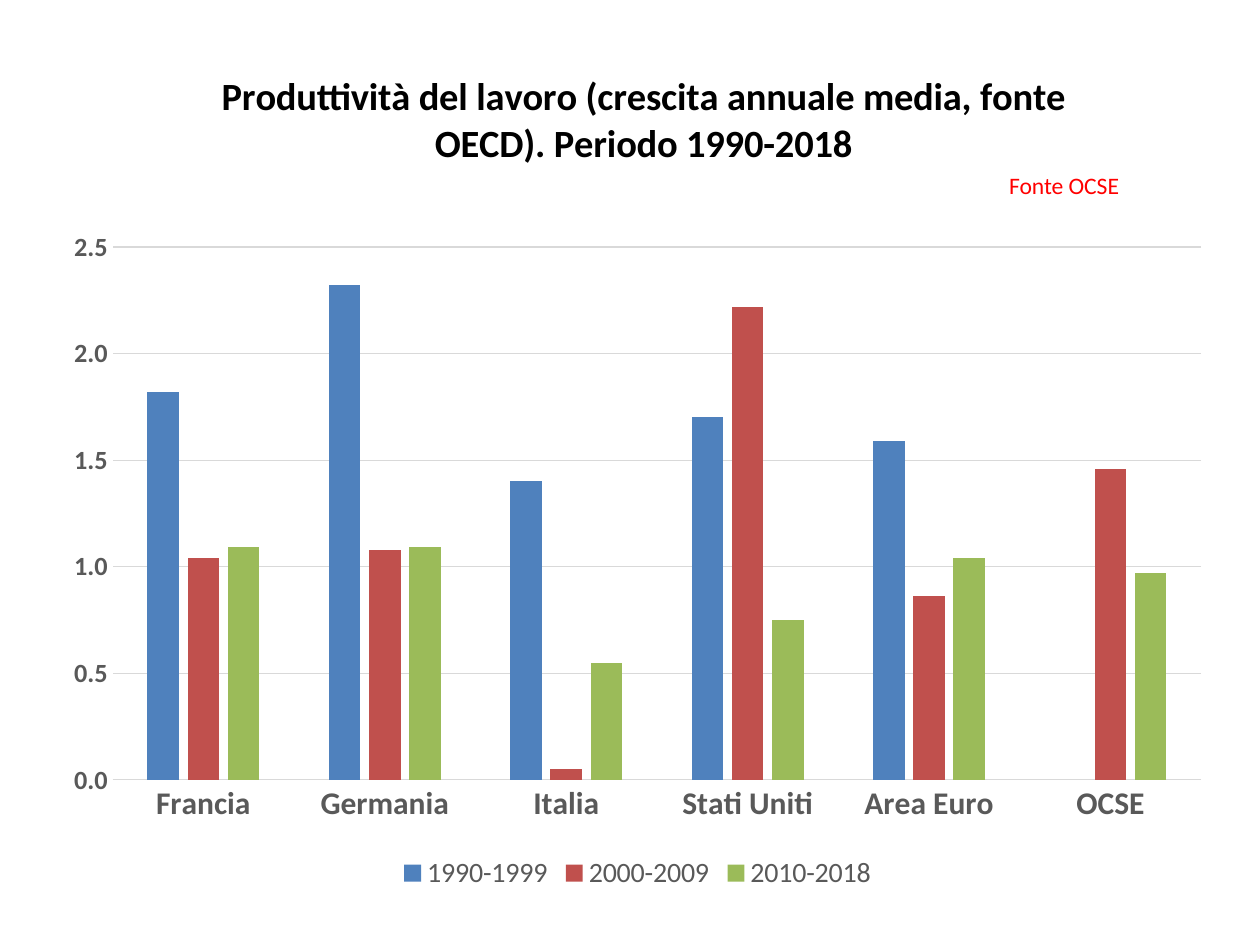
"""Build a slide with a clustered column chart of labour productivity growth."""
from lxml.etree import SubElement
from pptx import Presentation
from pptx.chart.data import CategoryChartData
from pptx.dml.color import RGBColor
from pptx.enum.chart import XL_CHART_TYPE as ChartType
from pptx.enum.chart import XL_LEGEND_POSITION as LegendPosition
from pptx.enum.chart import XL_TICK_MARK as TickMark
from pptx.oxml.ns import qn
from pptx.util import Inches, Pt

TITLE = "Produttività del lavoro (crescita annuale media, fonte OECD). Periodo 1990-2018"
SOURCE = "Fonte OCSE"
COUNTRIES = ["Francia", "Germania", "Italia", "Stati Uniti", "Area Euro", "OCSE"]
PERIODS = [
    ("1990-1999", [1.82, 2.32, 1.4, 1.7, 1.59, None], "blue"),
    ("2000-2009", [1.04, 1.08, 0.05, 2.22, 0.86, 1.46], "red"),
    ("2010-2018", [1.09, 1.09, 0.55, 0.75, 1.04, 0.97], "green"),
]
COLORS = {
    "blue": "4F81BD", "red": "C0504D", "green": "9BBB59", "black": "000000",
    "label": "595959", "grid": "D9D9D9", "source": "FF0000",
}
FONT = "Calibri"
TITLE_LAYOUT = {"xMode": "edge", "yMode": "edge", "x": 0.14, "y": 0.03}
PLOT_LAYOUT = {
    "layoutTarget": "inner", "xMode": "edge", "yMode": "edge",
    "x": 0.053, "y": 0.245, "w": 0.927, "h": 0.62,
}


def color(name):
    return RGBColor.from_string(COLORS[name])


def style_font(font, size, color_name, bold=False):
    font.name, font.size, font.bold = FONT, Pt(size), bold
    font.color.rgb = color(color_name)


def style_line(line):
    line.color.rgb = color("grid")
    line.width = Pt(0.75)


def set_layout(element, index, values):
    for old in element.findall(qn("c:layout")):
        element.remove(old)
    layout = SubElement(element, qn("c:layout"))
    element.insert(index, layout)
    manual = SubElement(layout, qn("c:manualLayout"))
    for name, value in values.items():
        SubElement(manual, qn(f"c:{name}")).set("val", str(value))


def add_source(slide):
    box = slide.shapes.add_textbox(Inches(7.91), Inches(1.31), Inches(1.09), Inches(0.33))
    box.text_frame.word_wrap = False
    box.text_frame.text = SOURCE
    style_font(box.text_frame.paragraphs[0].runs[0].font, 13.5, "source")


def add_productivity_chart(slide):
    data = CategoryChartData(number_format="0.00")
    data.categories = COUNTRIES
    for name, values, _ in PERIODS:
        data.add_series(name, values)
    chart = slide.shapes.add_chart(
        ChartType.COLUMN_CLUSTERED, Inches(0.4), Inches(0.29), Inches(9.32), Inches(6.82), data
    ).chart
    style_font(chart.font, 10, "black")

    title = chart.chart_title
    title.text_frame.text = TITLE
    style_font(title.text_frame.paragraphs[0].runs[0].font, 22, "black", True)
    title.include_in_layout = False
    set_layout(title._element, 1, TITLE_LAYOUT)

    plot = chart.plots[0]
    plot.gap_width, plot.overlap, plot.vary_by_categories = 219, -27, False
    set_layout(chart._chartSpace.chart.plotArea, 0, PLOT_LAYOUT)
    for series, (_, _, color_name) in zip(plot.series, PERIODS):
        series.format.fill.solid()
        series.format.fill.fore_color.rgb = color(color_name)
        series.invert_if_negative = False

    for axis, size in ((chart.category_axis, 18), (chart.value_axis, 15)):
        axis.major_tick_mark = axis.minor_tick_mark = TickMark.NONE
        style_font(axis.tick_labels.font, size, "label", True)
    style_line(chart.category_axis.format.line)
    values_axis = chart.value_axis
    values_axis.format.line.fill.background()
    values_axis.minimum_scale, values_axis.maximum_scale, values_axis.major_unit = 0, 2.5, 0.5
    values_axis.tick_labels.number_format = "0.0"
    values_axis.tick_labels.number_format_is_linked = False
    style_line(values_axis.major_gridlines.format.line)

    chart.has_legend = True
    chart.legend.position = LegendPosition.BOTTOM
    chart.legend.include_in_layout = False
    style_font(chart.legend.font, 16, "label")


def main():
    deck = Presentation()
    deck.slide_width, deck.slide_height = Inches(10), Inches(7.5)
    slide = deck.slides.add_slide(deck.slide_layouts[6])
    add_source(slide)
    add_productivity_chart(slide)
    deck.save("out.pptx")


if __name__ == "__main__":
    main()
